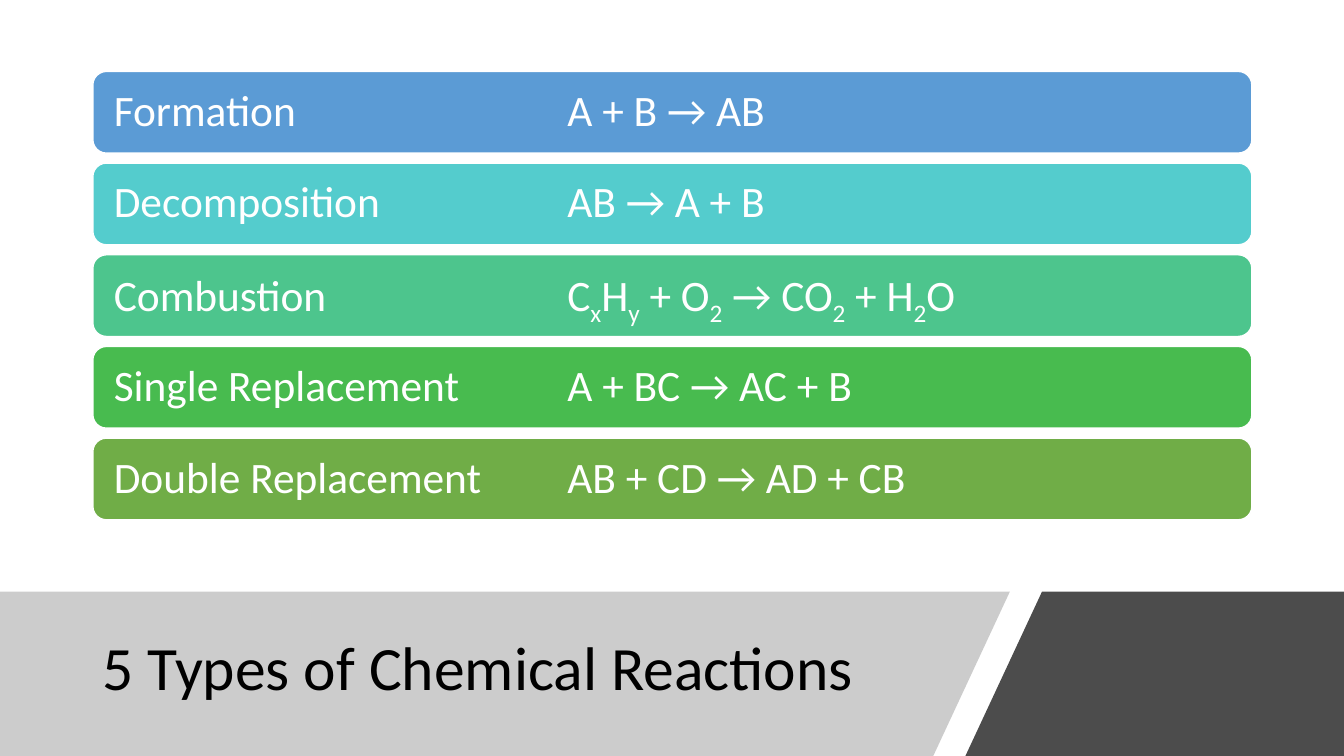
from dataclasses import dataclass

from lxml import etree
from pptx import Presentation
from pptx import util as u
from pptx.dml.color import RGBColor
from pptx.enum import shapes, text
from pptx.oxml import ns

FONT = "Calibri"
SLIDE_WIDTH, SLIDE_HEIGHT = 33.87, 19.05
LEFT = 2.34
ROW_TOP, ROW_PITCH = 1.8, 2.31
ROW_WIDTH, ROW_HEIGHT = 29.21, 2.06
EQUATION_TAB = 11.43
FOOTER_TOP = 14.91


@dataclass
class Reaction:
    name: str
    equation: str  # an underscore lowers the character after it
    color: str


@dataclass
class FooterPanel:
    points: list[tuple[float, float]]
    color: str
    opacity: int


REACTIONS = [
    Reaction("Formation", "A + B → AB", "5B9BD5"),
    Reaction("Decomposition", "AB → A + B", "54CCCD"),
    Reaction("Combustion", "C_xH_y + O_2 → CO_2 + H_2O", "4DC58D"),
    Reaction("Single Replacement", "A + BC → AC + B", "48BB4F"),
    Reaction("Double Replacement", "AB + CD → AD + CB", "70AD47"),
]

FOOTER_PANELS = [
    FooterPanel([(0, FOOTER_TOP), (25.45, FOOTER_TOP),
                 (23.52, SLIDE_HEIGHT), (0, SLIDE_HEIGHT)], "808080", 40),
    FooterPanel([(26.26, FOOTER_TOP), (SLIDE_WIDTH, FOOTER_TOP),
                 (SLIDE_WIDTH, SLIDE_HEIGHT), (24.33, SLIDE_HEIGHT)], "000000", 70),
]


def set_color(color_format, value: str) -> None:
    color_format.rgb = RGBColor.from_string(value)


def set_fill(shape, value: str) -> None:
    shape.shadow.inherit = False
    shape.fill.solid()
    set_color(shape.fill.fore_color, value)


def format_span(span, size: float, color: str) -> None:
    span.font.name = FONT
    span.font.size = u.Pt(size)
    set_color(span.font.color, color)


def add_panel(page, panel: FooterPanel) -> None:
    corners = [(u.Cm(x), u.Cm(y)) for x, y in panel.points]
    builder = page.shapes.build_freeform(*corners[0])
    builder.add_line_segments(corners[1:], close=True)
    shape = builder.convert_to_shape()
    set_fill(shape, panel.color)
    shape.line.fill.background()
    color = shape.fill._xPr.find(".//" + ns.qn("a:srgbClr"))
    etree.SubElement(color, ns.qn("a:alpha"), val=str(panel.opacity * 1000))


def add_title(page, title: str) -> None:
    box = page.shapes.add_textbox(u.Cm(LEFT), u.Cm(15.37), u.Cm(21.44), u.Cm(3.05))
    frame = box.text_frame
    frame.word_wrap = True
    frame.vertical_anchor = text.MSO_ANCHOR.MIDDLE
    frame.text = title
    para = frame.paragraphs[0]
    para.line_spacing = 0.9
    format_span(para.runs[0], 44, "000000")


def add_reaction(page, reaction: Reaction, top: float) -> None:
    bar = page.shapes.add_shape(shapes.MSO_SHAPE.ROUNDED_RECTANGLE, u.Cm(LEFT), u.Cm(top),
                                u.Cm(ROW_WIDTH), u.Cm(ROW_HEIGHT))
    set_fill(bar, reaction.color)
    set_color(bar.line.color, "FFFFFF")
    bar.line.width = u.Pt(1)

    frame = bar.text_frame
    frame.word_wrap = True
    frame.vertical_anchor = text.MSO_ANCHOR.MIDDLE
    frame.margin_left = frame.margin_right = u.Cm(0.43)
    para = frame.paragraphs[0]
    para.alignment = text.PP_ALIGN.LEFT
    para.line_spacing = 0.9

    # Tab stop that lines up the equations
    tabs = etree.SubElement(para._p.get_or_add_pPr(), ns.qn("a:tabLst"))
    etree.SubElement(tabs, ns.qn("a:tab"), pos=str(u.Cm(EQUATION_TAB)), algn="l")

    # Name and equation, split at each subscript
    first, *lowered = reaction.equation.split("_")
    pieces = [(f"{reaction.name}\t{first}", False)]
    for piece in lowered:
        pieces += [(piece[0], True), (piece[1:], False)]
    for wording, is_subscript in pieces:
        if wording:
            span = para.add_run()
            span.text = wording
            format_span(span, 31, "FFFFFF")
            if is_subscript:
                span.font._element.set("baseline", "-25000")


def main() -> None:
    deck = Presentation()
    deck.slide_width, deck.slide_height = u.Cm(SLIDE_WIDTH), u.Cm(SLIDE_HEIGHT)
    page = deck.slides.add_slide(deck.slide_layouts[6])

    # Footer with the title
    for panel in FOOTER_PANELS:
        add_panel(page, panel)
    add_title(page, "5 Types of Chemical Reactions")

    # Reaction rows
    for index, reaction in enumerate(REACTIONS):
        add_reaction(page, reaction, ROW_TOP + index * ROW_PITCH)

    deck.save("out.pptx")


if __name__ == "__main__":
    main()
